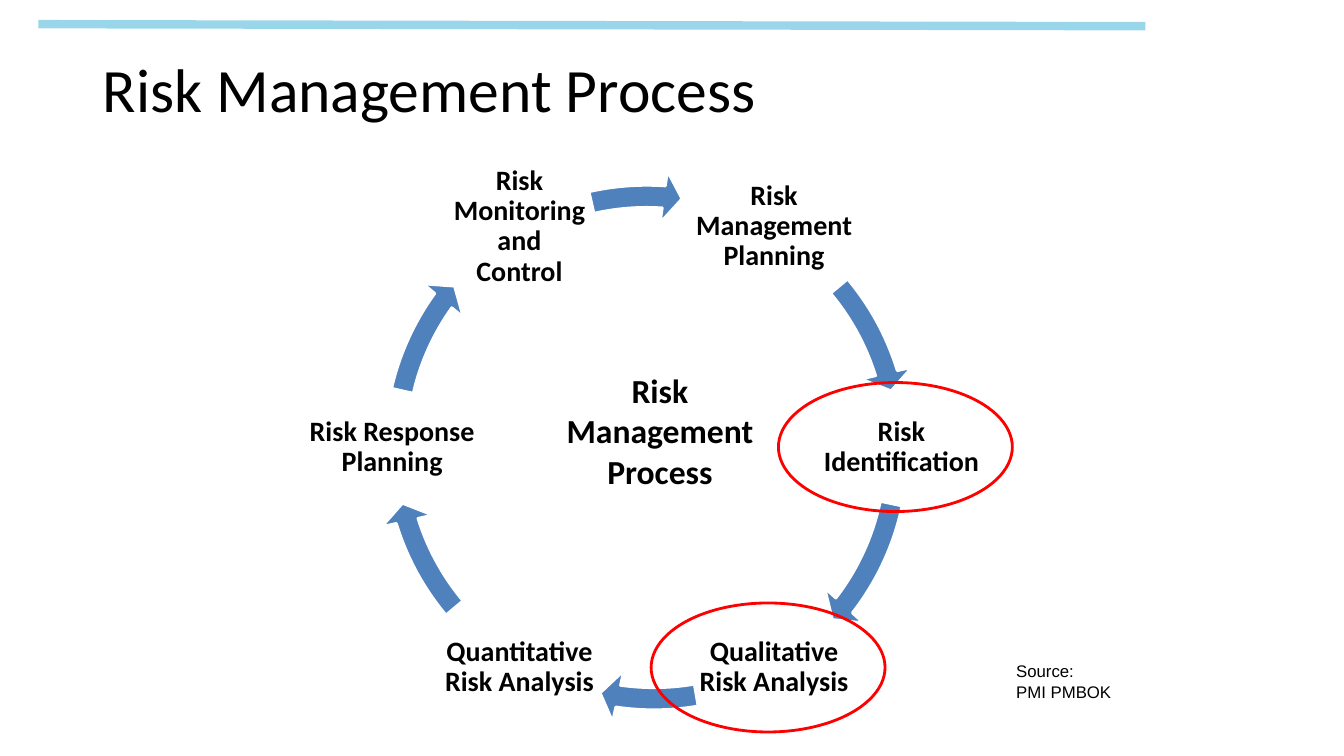
from math import cos, sin, radians
from lxml import etree
from pptx import Presentation
from pptx.dml.color import RGBColor
from pptx.enum.shapes import MSO_CONNECTOR as CONN, MSO_SHAPE as SHAPE
from pptx.enum.text import MSO_ANCHOR as ANCHOR, MSO_AUTO_SIZE as AUTO, PP_ALIGN as ALIGN
from pptx.oxml.ns import qn
from pptx.util import Inches, Pt

W, H = 13.33, 7.5
BLACK, BLUE, SKY, RED, WHITE = "000000", "4F81BD", "99D6EA", "FF0000", "FFFFFF"

# Stage label, label width, ringed in red
STAGES = [
    ("Risk Management Planning", 1.8, False),
    ("Risk Identification", 1.81, True),
    ("Qualitative\nRisk Analysis", 1.63, True),
    ("Quantitative Risk Analysis", 1.56, False),
    ("Risk Response Planning", 1.9, False),
    ("Risk Monitoring and Control", 1.4, False),
]
# Arrow after each stage: start and head angle in degrees, shift in inches
ARROWS = [
    (320.08, 342.87, 0, 0),
    (11.86, 37.72, -0.01, 0.05),
    (80.28, 98.19, 0.07, 0.01),
    (140.08, 162.87, 0, 0),
    (192.96, 215.75, 0, 0),
    (257.26, 273.89, 0, 0),
]


def color(value):
    return RGBColor.from_string(value)


def centred(cx, cy, w, h):
    return [Inches(v) for v in (cx - w / 2, cy - h / 2, w, h)]


def write(tf, text, size, font="Calibri", bold=False, align=ALIGN.LEFT, spacing=1.0):
    tf.word_wrap = True
    tf.auto_size = AUTO.NONE
    p = tf.paragraphs[0]
    p.alignment, p.line_spacing = align, spacing
    for i, line in enumerate(text.split("\n")):
        if i:
            p.add_line_break()
        r = p.add_run()
        r.text = line
        r.font.name, r.font.size, r.font.bold = font, Pt(size), bold
        r.font.color.rgb = color(BLACK)


def add_outlined(slide, kind, box, line, fill=None):
    sp = slide.shapes.add_shape(kind, *box)
    sp.shadow.inherit = False
    if fill:
        sp.fill.solid()
        sp.fill.fore_color.rgb = color(fill)
    else:
        sp.fill.background()
    sp.line.color.rgb = color(line)
    sp.line.width = Pt(2)
    return sp


def add_header(slide, x, y, w, h):
    # Rule along the top edge
    rule = slide.shapes.add_connector(
        CONN.STRAIGHT, Inches(0.38), Inches(0.24), Inches(11.36), Inches(0.26))
    rule.line.color.rgb = color(SKY)
    rule.line.width = Pt(6)
    etree.SubElement(rule._element.spPr, qn("a:effectLst"))
    # Title
    title = slide.shapes.title
    title.left, title.top, title.width, title.height = [Inches(v) for v in (x, y, w, h)]
    title.text_frame.vertical_anchor = ANCHOR.MIDDLE
    write(title.text_frame, "Risk Management Process", 44, spacing=0.9)


def add_stage(slide, cx, cy, text, width):
    tf = slide.shapes.add_textbox(*centred(cx, cy, width, 1.12)).text_frame
    tf.margin_left = tf.margin_right = tf.margin_top = tf.margin_bottom = Inches(0.03)
    tf.vertical_anchor = ANCHOR.MIDDLE
    write(tf, text, 20, bold=True, align=ALIGN.CENTER, spacing=0.9)


def add_arrow(slide, cx, cy, size, start, head):
    sp = add_outlined(slide, SHAPE.CIRCULAR_ARROW, centred(cx, cy, size, size), WHITE, BLUE)
    # Angles are stored in 60000ths of a degree, adjustments in 100000ths
    for i, value in enumerate((0.04, 4.18 * 0.6, head * 0.6, start * 0.6, 0.047)):
        sp.adjustments[i] = value


def add_cycle(slide, x, y, size):
    cx, cy = x + size / 2, y + size / 2
    radius = size * 0.46
    ringed = []
    # Stages sit on a hexagon, each followed by its arrow
    for i, ((text, width, ring), (start, head, dx, dy)) in enumerate(zip(STAGES, ARROWS)):
        angle = radians(60 * i - 60)
        sx, sy = cx + radius * cos(angle), cy + radius * sin(angle)
        add_stage(slide, sx, sy, text, width)
        add_arrow(slide, cx + dx, cy + dy, size, start, head)
        if ring:
            ringed.append((sx, sy))
    # Centre label
    tf = slide.shapes.add_textbox(*centred(cx + 0.13, cy - 0.16, 2.54, 1.31)).text_frame
    write(tf, "Risk Management Process", 24, bold=True, align=ALIGN.CENTER)
    # Highlight rings
    for sx, sy in ringed:
        add_outlined(slide, SHAPE.OVAL, centred(sx - 0.06, sy, 2.32, 1.28), RED)


def add_source(slide, x, y, w, h):
    tf = slide.shapes.add_textbox(*[Inches(v) for v in (x, y, w, h)]).text_frame
    write(tf, "Source:\nPMI PMBOK", 12, font="Arial")


def main():
    prs = Presentation()
    prs.slide_width, prs.slide_height = Inches(W), Inches(H)
    slide = prs.slides.add_slide(prs.slide_layouts[5])
    add_header(slide, 0.92, 0.4, 11.5, 1.04)
    add_cycle(slide, 3.67, 1.69, 5.49)
    add_source(slide, 9.98, 6.51, 1.17, 0.5)
    prs.save("out.pptx")


if __name__ == "__main__":
    main()
